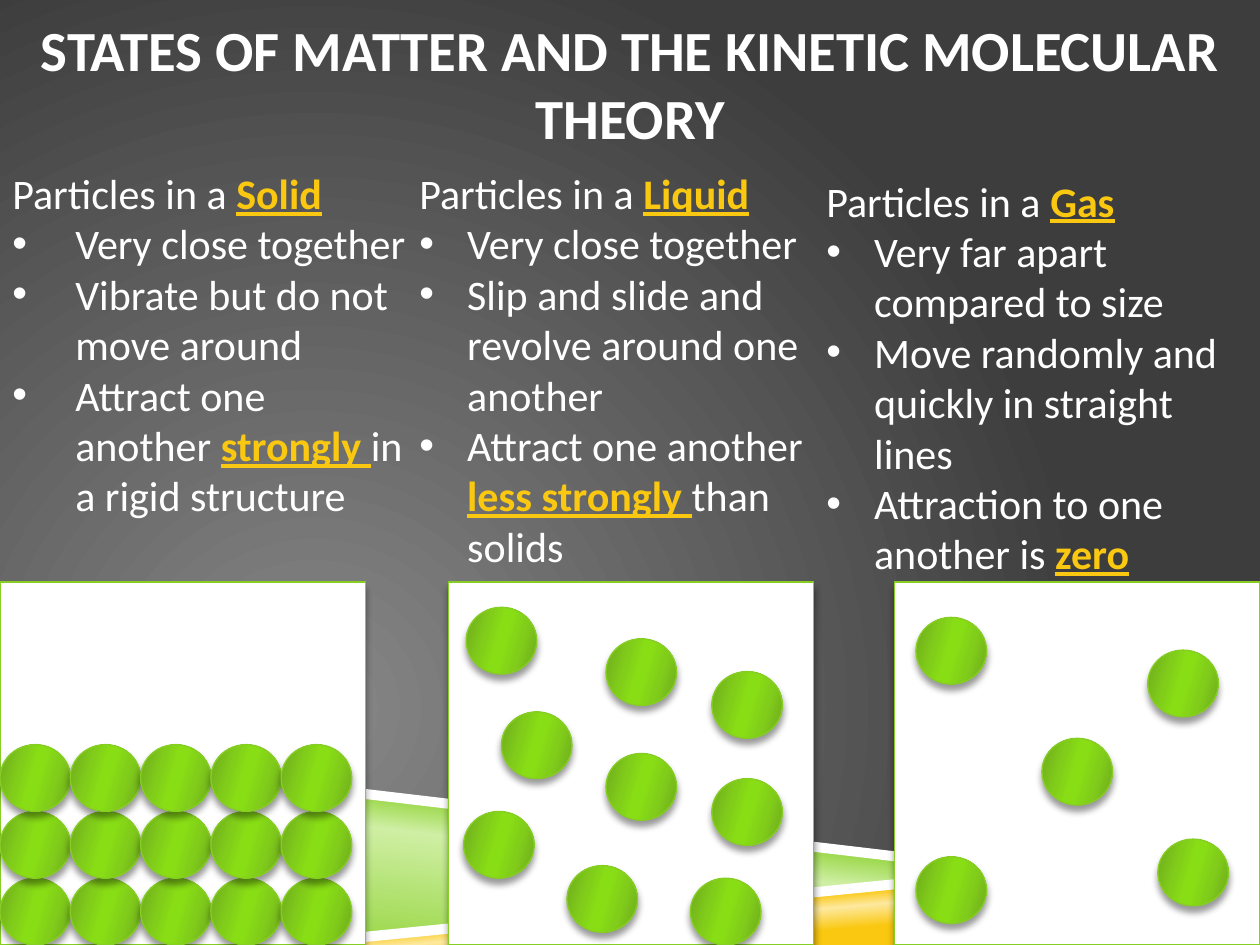
"""Build the slide on states of matter and the kinetic molecular theory."""
from itertools import product
from lxml.etree import SubElement
from pptx import Presentation
from pptx.dml.color import RGBColor
from pptx.enum.shapes import MSO_SHAPE as SHAPE
from pptx.enum.text import MSO_ANCHOR, MSO_AUTO_SIZE, PP_ALIGN
from pptx.oxml.ns import qn
from pptx.util import Inches, Pt

U = Inches(0.01)
COLS, ROWS = 1000, 750
WHITE, GREEN, GOLD = "FFFFFF", "86CE24", "FAC810"


def paint(fill, color, owner=None, angle=0):
    """Fill with one hex colour, or with (position, hex) gradient stops."""
    if isinstance(color, str):
        fill.solid()
        fill.fore_color.rgb = RGBColor.from_string(color)
        return
    fill.gradient()
    stops = owner.find(".//" + qn("a:gsLst"))
    for old in list(stops):
        stops.remove(old)
    for pos, hex_color in color:
        gs = SubElement(stops, qn("a:gs"), pos=str(pos * 1000))
        SubElement(gs, qn("a:srgbClr"), val=hex_color)
    owner.find(".//" + qn("a:lin")).set("ang", str(angle * 60000))


def add_text(p, text, size=24, bold=False, indent=0, align=PP_ALIGN.LEFT):
    """Write text into a paragraph, with *marked* words as key terms."""
    p.alignment = align
    if indent:
        pPr = p._p.get_or_add_pPr()
        pPr.set("marL", str(indent * U))
        pPr.set("indent", str(-indent * U))
        SubElement(pPr, qn("a:buFont"), typeface="Arial")
        SubElement(pPr, qn("a:buChar"), char="•")
    for i, part in enumerate(text.split("*")):
        if part:
            key = i % 2 == 1
            r = p.add_run()
            r.text = part
            r.font.name, r.font.size = "Calibri", Pt(size)
            r.font.bold, r.font.underline = bold or key, key
            paint(r.font.fill, GOLD if key else WHITE)


prs = Presentation()
prs.slide_width, prs.slide_height = COLS * U, ROWS * U
s = prs.slides.add_slide(prs.slide_layouts[6])

paint(s.background.fill, [(0, "878787"), (100, "3D3D3D")], s._element)
lin = s._element.find(".//" + qn("a:lin"))
radial = SubElement(lin.getparent(), qn("a:path"), path="circle")
SubElement(radial, qn("a:fillToRect"), l="50000", t="100000", r="100000", b="50000")
lin.getparent().remove(lin)

bands = [
    ([(0, 597), (792, 692), (200, ROWS), (0, ROWS)],
     [(0, GREEN), (52, "CFEFA4"), (66, GREEN)], 277),
    ([(198, ROWS), (COLS, 672), (COLS, ROWS)],
     [(28, GOLD), (40, "FDE99F"), (48, GOLD)], 265),
    ([(0, 592), (0, 600), (790, 693), (832, 690)], WHITE, 0),
    ([(COLS, 669), (184, ROWS), (266, ROWS), (COLS, 677)], WHITE, 0),
]
for points, color, angle in bands:
    builder = s.shapes.build_freeform(*points[0], scale=U)
    builder.add_line_segments(points[1:], close=True)
    sp = builder.convert_to_shape()
    sp.shadow.inherit = False
    sp.line.fill.background()
    paint(sp.fill, color, sp._element, angle)

BOX_W, BOX_H, BALL_W, BALL_H = 290, 288, 56, 53
ball_fill = [(0, "6EA91D"), (30, "81CD1A"), (45, "88DD15"),
             (55, "88DD15"), (73, "81CD1A"), (100, "6EA91D")]
solid = [(col * 55.8, ROWS - row * BALL_H) for row, col in product((1, 2, 3), range(5))]
liquid = [(370, 482), (565, 533), (368, 644), (398, 565), (548, 697),
          (565, 618), (481, 507), (481, 598), (450, 687)]
gas = [(727, 490), (919, 666), (727, 680), (827, 586), (911, 516)]
containers = [(SHAPE.RECTANGLE, x, ROWS - BOX_H, BOX_W, BOX_H, WHITE)
              for x in (0, 356, COLS - BOX_W)]
balls = [(SHAPE.OVAL, x, y, BALL_W, BALL_H, ball_fill) for x, y in solid + liquid + gas]
for kind, x, y, w, h, color in containers + balls:
    sp = s.shapes.add_shape(kind, int(x * U), y * U, w * U, h * U)
    paint(sp.fill, color, sp._element, 16)
    paint(sp.line.fill, GREEN)
    sp.line.width = Pt(0.75)
    sp.shadow.inherit = False
    shadow = SubElement(sp._element.spPr.find(qn("a:effectLst")), qn("a:outerShdw"),
                        blurRad=str(Pt(4)), dist=str(Pt(3.3)), dir="5400000", rotWithShape="0")
    black = SubElement(shadow, qn("a:srgbClr"), val="000000")
    SubElement(black, qn("a:alpha"), val="40000")

tf = s.shapes.add_textbox(0, 3 * U, COLS * U, 125 * U).text_frame
tf.word_wrap = True
tf.vertical_anchor = MSO_ANCHOR.MIDDLE
tf.margin_left = tf.margin_right = 0
add_text(tf.paragraphs[0], "STATES OF MATTER AND THE KINETIC MOLECULAR THEORY",
         size=32.4, bold=True, align=PP_ALIGN.CENTER)

states = [
    (0, 128, 334, 50, "Solid",
     ["Very close together", "Vibrate but do not move around",
      "Attract one another *strongly *in a rigid structure"]),
    (323, 128, 336, 38, "Liquid",
     ["Very close together", "Slip and slide and revolve around one another",
      "Attract one another *less strongly *than solids"]),
    (646, 134, 354, 38, "Gas",
     ["Very far apart compared to size", "Move randomly and quickly in straight lines",
      "Attraction to one another is *zero*"]),
]
for x, y, w, indent, state, facts in states:
    tf = s.shapes.add_textbox(x * U, y * U, w * U, 333 * U).text_frame
    tf.word_wrap = True
    tf.auto_size = MSO_AUTO_SIZE.SHAPE_TO_FIT_TEXT
    add_text(tf.paragraphs[0], f"Particles in a *{state}*")
    for fact in facts:
        add_text(tf.add_paragraph(), fact, indent=indent)

prs.save("out.pptx")
